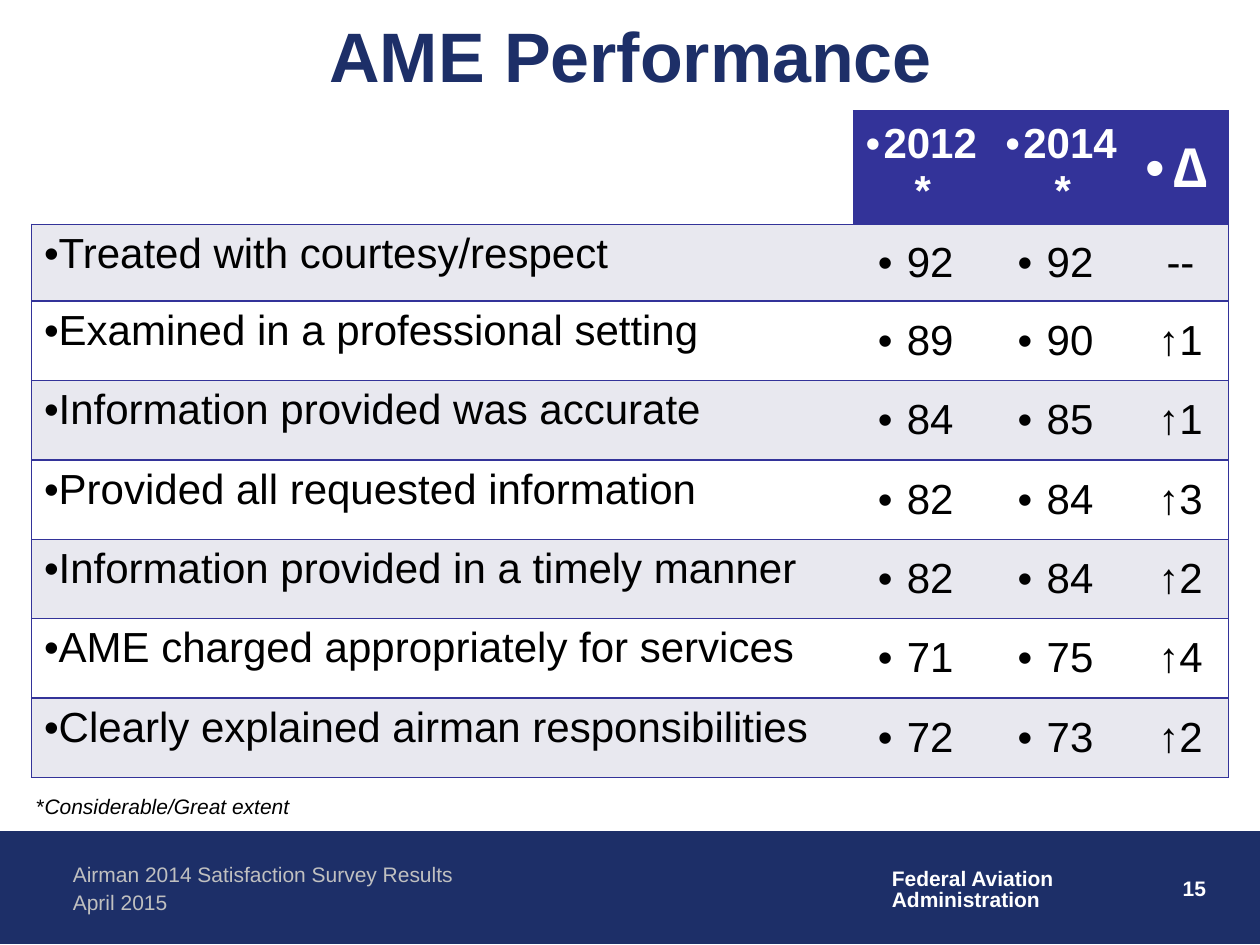
from lxml import etree
from pptx import Presentation
from pptx import util as u
from pptx.dml.color import RGBColor
from pptx.enum import shapes, text
from pptx.oxml.ns import qn

COLORS = {
    "navy": "1D2F68",
    "indigo": "333399",
    "band": "E8E8EF",
    "white": "FFFFFF",
    "black": "000000",
    "silver": "C0C0C0",
}
FONT = "Arial"
HEADINGS = ["2012*", "2014*", "∆"]
RATINGS = [
    ("Treated with courtesy/respect", "92", "92", "--"),
    ("Examined in a professional setting", "89", "90", "↑1"),
    ("Information provided was accurate", "84", "85", "↑1"),
    ("Provided all requested information", "82", "84", "↑3"),
    ("Information provided in a timely manner", "82", "84", "↑2"),
    ("AME charged appropriately for services", "71", "75", "↑4"),
    ("Clearly explained airman responsibilities", "72", "73", "↑2"),
]
COLUMN_WIDTHS = [6.52, 1.11, 1.11, 0.76]
ROW_HEIGHTS = [0.88, 0.61] + [0.63] * 6
BULLET_HANG = u.Inches(0.23)
CENTER = text.PP_ALIGN.CENTER
MIDDLE = text.MSO_ANCHOR.MIDDLE


def rgb(name):
    return RGBColor.from_string(COLORS[name])


def add_run(paragraph, words, size, color, bold=False, italic=False):
    run = paragraph.add_run()
    run.text = words
    run.font.name = FONT
    run.font.size = u.Pt(size)
    run.font.color.rgb = rgb(color)
    run.font.bold = bold
    run.font.italic = italic


def add_text(slide, box, lines, size, color, bold=False, align=None,
             anchor=text.MSO_ANCHOR.TOP, spacing=None, wrap=True):
    frame = slide.shapes.add_textbox(*map(u.Inches, box)).text_frame
    frame.word_wrap = wrap
    frame.vertical_anchor = anchor
    for index, line in enumerate(lines):
        paragraph = frame.add_paragraph() if index else frame.paragraphs[0]
        paragraph.alignment = align
        paragraph.line_spacing = spacing
        for words, italic in line:
            add_run(paragraph, words, size, color, bold, italic)


def add_footer_band(slide):
    band = slide.shapes.add_shape(
        shapes.MSO_SHAPE.RECTANGLE, 0, u.Inches(6.6), u.Inches(10), u.Inches(0.89))
    band.shadow.inherit = False
    band.fill.solid()
    band.fill.fore_color.rgb = rgb("navy")
    band.line.color.rgb = rgb("navy")
    band.line.width = u.Pt(0.75)


def set_borders(cell, sides):
    properties = cell._tc.get_or_add_tcPr()
    for side in "LRTB":
        line = etree.SubElement(properties, qn(f"a:ln{side}"), w=str(u.Pt(1)))
        if side in sides:
            fill = etree.SubElement(line, qn("a:solidFill"))
            etree.SubElement(fill, qn("a:srgbClr"), val=COLORS["indigo"])
        else:
            etree.SubElement(line, qn("a:noFill"))


def add_bullet(paragraph):
    properties = paragraph._p.get_or_add_pPr()
    properties.set("marL", "0")
    properties.set("indent", str(-BULLET_HANG))
    etree.SubElement(properties, qn("a:buFont"), typeface=FONT)
    etree.SubElement(properties, qn("a:buChar"), char="•")


def fill_cell(cell, words, fill, size=24, color="black", bold=False,
              centered=True, bullet=True, borders="TB"):
    set_borders(cell, borders)
    cell.fill.solid()
    cell.fill.fore_color.rgb = rgb(fill)
    paragraph = cell.text_frame.paragraphs[0]
    if centered:
        cell.vertical_anchor = MIDDLE
        paragraph.alignment = CENTER
    if bullet:
        add_bullet(paragraph)
    add_run(paragraph, words, size, color, bold)


def add_ratings_table(slide):
    table = slide.shapes.add_table(
        len(ROW_HEIGHTS), len(COLUMN_WIDTHS), u.Inches(0.25), u.Inches(0.88),
        u.Inches(sum(COLUMN_WIDTHS)), u.Inches(sum(ROW_HEIGHTS))).table
    table.first_row = False
    table.horz_banding = False
    for column, width in zip(table.columns, COLUMN_WIDTHS):
        column.width = u.Inches(width)
    for row, height in zip(table.rows, ROW_HEIGHTS):
        row.height = u.Inches(height)

    last = len(COLUMN_WIDTHS) - 1
    corner = table.cell(0, 0)
    set_borders(corner, "B")
    corner.fill.background()
    for col, heading in enumerate(HEADINGS, 1):
        fill_cell(table.cell(0, col), heading, "indigo",
                  size=32 if col == last else 24, color="white", bold=True,
                  borders="RTB" if col == last else "TB")
    edges = {0: "LTB", last: "RTB"}
    for row, rating in enumerate(RATINGS, 1):
        for col, words in enumerate(rating):
            fill_cell(table.cell(row, col), words, "band" if row % 2 else "white",
                      centered=col > 0, bullet=col < last,
                      borders=edges.get(col, "TB"))


def main():
    deck = Presentation()
    deck.slide_width = u.Inches(10)
    deck.slide_height = u.Inches(7.5)
    slide = deck.slides.add_slide(deck.slide_layouts[6])

    add_footer_band(slide)
    add_text(slide, (7.59, 6.9, 2.08, 0.5), [[("15", False)]], 12, "white",
             bold=True, align=text.PP_ALIGN.RIGHT)
    add_text(slide, (6.98, 6.85, 1.5, 0.44),
             [[("Federal Aviation", False)], [("Administration", False)]],
             12, "white", bold=True, spacing=0.85, wrap=False)
    add_text(slide, (0.48, 6.79, 5.23, 0.3),
             [[("Airman 2014 Satisfaction Survey Results", False)]], 12, "silver")
    add_text(slide, (0.48, 7.01, 4.09, 0.3), [[("April 2015", False)]], 12, "silver")
    add_text(slide, (0.37, 0.1, 9.27, 0.67), [[("AME Performance", False)]],
             40, "navy", bold=True, align=CENTER, anchor=MIDDLE)
    add_ratings_table(slide)
    add_text(slide, (0.19, 6.25, 4.58, 0.3),
             [[("*", False), ("Considerable/Great extent", True)]], 12, "black")
    deck.save("out.pptx")


if __name__ == "__main__":
    main()
